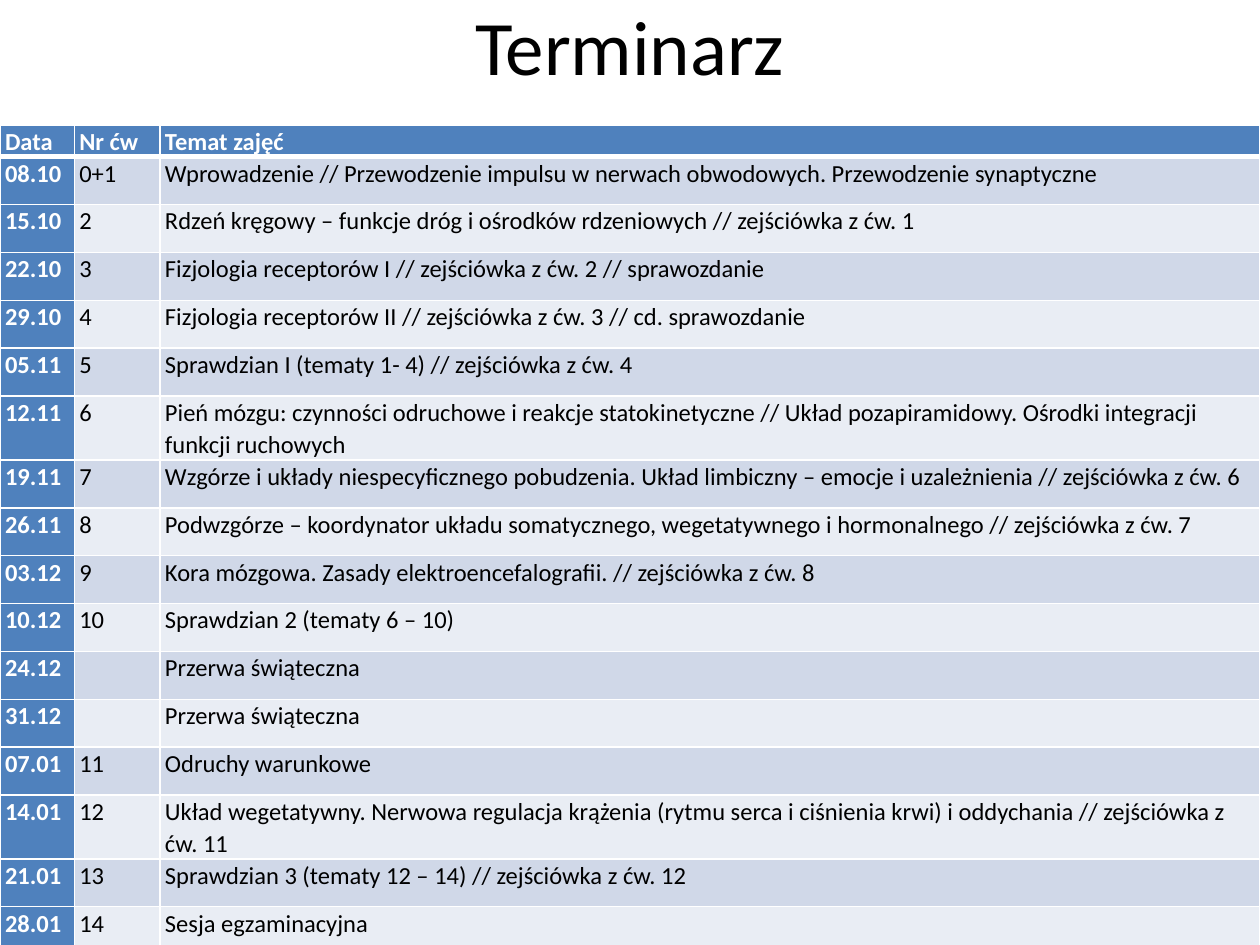
from lxml.etree import SubElement
from pptx import Presentation
from pptx.dml.color import RGBColor as RGB
from pptx.enum.text import MSO_ANCHOR as Anchor, PP_ALIGN as Align
from pptx.oxml.ns import qn
from pptx.util import Inches, Pt

FONT = "Calibri"
COLORS = {"blue": "4F81BD", "odd": "D0D8E8", "even": "E9EDF4",
          "white": "FFFFFF", "black": "000000"}
COLUMNS = [0.59, 0.68, 8.73]
HEADER_HEIGHT, ROW_HEIGHT = 0.19, 0.38
SCHEDULE = [
    ("Data", "Nr ćw", "Temat zajęć"),
    ("08.10", "0+1", "Wprowadzenie // Przewodzenie impulsu w nerwach obwodowych. "
                     "Przewodzenie synaptyczne"),
    ("15.10", "2", "Rdzeń kręgowy – funkcje dróg i ośrodków rdzeniowych // zejściówka z ćw. 1"),
    ("22.10", "3", "Fizjologia receptorów I // zejściówka z ćw. 2 // sprawozdanie"),
    ("29.10", "4", "Fizjologia receptorów II // zejściówka z ćw. 3 // cd. sprawozdanie"),
    ("05.11", "5", "Sprawdzian I (tematy 1- 4) // zejściówka z ćw. 4"),
    ("12.11", "6", "Pień mózgu: czynności odruchowe i reakcje statokinetyczne // "
                   "Układ pozapiramidowy. Ośrodki integracji funkcji ruchowych"),
    ("19.11", "7", "Wzgórze i układy niespecyficznego pobudzenia. Układ limbiczny – "
                   "emocje i uzależnienia // zejściówka z ćw. 6"),
    ("26.11", "8", "Podwzgórze – koordynator układu somatycznego, wegetatywnego i "
                   "hormonalnego // zejściówka z ćw. 7"),
    ("03.12", "9", "Kora mózgowa. Zasady elektroencefalografii. // zejściówka z ćw. 8"),
    ("10.12", "10", "Sprawdzian 2 (tematy 6 – 10)"),
    ("24.12", "", "Przerwa świąteczna"),
    ("31.12", "", "Przerwa świąteczna"),
    ("07.01", "11", "Odruchy warunkowe"),
    ("14.01", "12", "Układ wegetatywny. Nerwowa regulacja krążenia (rytmu serca i "
                    "ciśnienia krwi) i oddychania // zejściówka z ćw. 11"),
    ("21.01", "13", "Sprawdzian 3 (tematy 12 – 14) // zejściówka z ćw. 12"),
    ("28.01", "14", "Sesja egzaminacyjna"),
]


def color(name):
    return RGB.from_string(COLORS[name])


def style_paragraph(p, size, color_name, bold=False):
    p.font.name, p.font.size, p.font.bold = FONT, Pt(size), bold
    p.font.color.rgb = color(color_name)


def add_title(s, text):
    sp = s.shapes.title
    sp.left, sp.top, sp.width, sp.height = map(Inches, (0.5, -0.27, 9, 1.25))
    tf = sp.text_frame
    tf.text, tf.vertical_anchor = text, Anchor.MIDDLE
    p = tf.paragraphs[0]
    p.alignment = Align.CENTER
    style_paragraph(p, 44, "black")


def set_borders(cell, bottom=1):
    tc_pr = cell._tc.get_or_add_tcPr()
    for side, width in (("L", 1), ("R", 1), ("T", 1), ("B", bottom)):
        ln = SubElement(tc_pr, qn(f"a:ln{side}"), w=str(Pt(width)))
        fill = SubElement(ln, qn("a:solidFill"))
        SubElement(fill, qn("a:srgbClr"), val=COLORS["white"])


def style_cell(cell, text, row, col):
    accent = row == 0 or col == 0
    set_borders(cell, bottom=3 if row == 0 else 1)
    cell.fill.solid()
    cell.fill.fore_color.rgb = color("blue" if accent else "odd" if row % 2 else "even")
    cell.margin_left = cell.margin_right = Inches(0.04)
    cell.margin_top = cell.margin_bottom = 0
    cell.text = text
    p = cell.text_frame.paragraphs[0]
    p.line_spacing = 1.07
    style_paragraph(p, 14, "white" if accent else "black", bold=accent)


def add_schedule(s, rows):
    height = HEADER_HEIGHT + ROW_HEIGHT * (len(rows) - 1)
    table = s.shapes.add_table(len(rows), len(COLUMNS), 0, Inches(0.99),
                               Inches(sum(COLUMNS)), Inches(height)).table
    table.first_col = True
    for column, width in zip(table.columns, COLUMNS):
        column.width = Inches(width)
    for r, texts in enumerate(rows):
        table.rows[r].height = Inches(ROW_HEIGHT if r else HEADER_HEIGHT)
        for c, text in enumerate(texts):
            style_cell(table.cell(r, c), text, r, c)


def main():
    prs = Presentation()
    prs.slide_width, prs.slide_height = Inches(10), Inches(7.5)
    s = prs.slides.add_slide(prs.slide_layouts[5])  # title only
    add_title(s, "Terminarz")
    add_schedule(s, SCHEDULE)
    prs.save("out.pptx")


if __name__ == "__main__":
    main()
